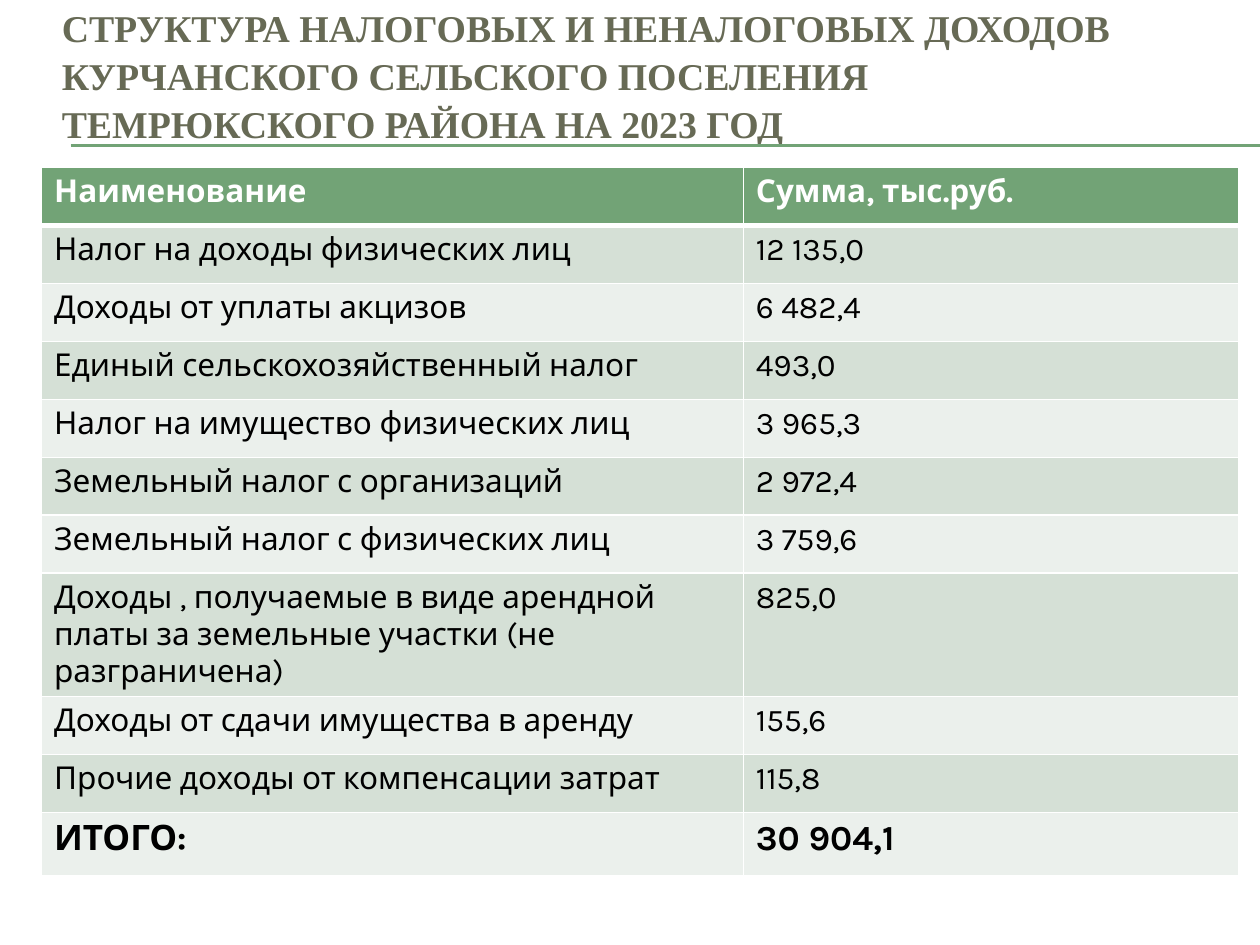
from lxml import etree
from pptx import Presentation
from pptx.dml.color import RGBColor
from pptx.enum.shapes import MSO_CONNECTOR
from pptx.enum.text import MSO_ANCHOR, PP_ALIGN
from pptx.oxml.ns import qn
from pptx.util import Inches, Pt

STRAIGHT = MSO_CONNECTOR.STRAIGHT
MIDDLE = MSO_ANCHOR.MIDDLE
LEFT = PP_ALIGN.LEFT

TITLE = ("СТРУКТУРА НАЛОГОВЫХ И НЕНАЛОГОВЫХ ДОХОДОВ "
         "КУРЧАНСКОГО СЕЛЬСКОГО ПОСЕЛЕНИЯ ТЕМРЮКСКОГО РАЙОНА НА 2023 ГОД")
HEADER = ("Наименование", "Сумма, тыс.руб.")
INCOME = [
    ("Налог на доходы физических лиц", "12 135,0"),
    ("Доходы от уплаты акцизов", "6 482,4"),
    ("Единый сельскохозяйственный налог", "493,0"),
    ("Налог на имущество физических лиц", "3 965,3"),
    ("Земельный налог с организаций", "2 972,4"),
    ("Земельный налог с физических лиц", "3 759,6"),
    ("Доходы , получаемые в виде арендной платы за земельные участки "
     "(не разграничена)", "825,0"),
    ("Доходы от сдачи имущества в аренду", "155,6"),
    ("Прочие доходы от компенсации затрат", "115,8"),
]
TOTAL = ("ИТОГО:", "30 904,1")

COLORS = {"title": "676A55", "accent": "72A376", "odd": "D5E0D6",
          "even": "EBF0EC", "white": "FFFFFF", "black": "000000"}
TITLE_FONT = {"name": "Times New Roman", "size": Pt(21.6), "bold": True}
HEADER_FONT = {"name": "Karla", "size": Pt(18), "bold": True}
INCOME_FONT = {**HEADER_FONT, "bold": False}
TOTAL_FONT = {**HEADER_FONT, "size": Pt(20)}

TABLE_BOX = (0.33, 1.33, 9.5, 5.47)
COLUMN_WIDTHS = (5.57, 3.93)
ROW_HEIGHT, LONG_ROW_HEIGHT, TOTAL_HEIGHT = 0.46, 0.8, 0.5
LONG_TEXT = 50
RULE_LEFT, RULE_RIGHT, RULE_TOPS = 0.56, 10, (1.15, 1.16)


def color(name):
    return RGBColor.from_string(COLORS[name])


def format_font(font, formats, color_name):
    for attribute, value in formats.items():
        setattr(font, attribute, value)
    font.color.rgb = color(color_name)


def add_rule(slide, top):
    rule = slide.shapes.add_connector(
        STRAIGHT, Inches(RULE_LEFT), Inches(top), Inches(RULE_RIGHT), Inches(top))
    rule.line.color.rgb = color("accent")
    rule.line.width = Pt(0.75)
    etree.SubElement(rule._element.spPr, qn("a:effectLst"))


def add_title(slide):
    title = slide.shapes.title
    title.left, title.top = Inches(0.39), Inches(0.16)
    title.width, title.height = Inches(9), Inches(0.86)
    frame = title.text_frame
    frame.text = TITLE
    frame.word_wrap = True
    frame.vertical_anchor = MIDDLE
    paragraph = frame.paragraphs[0]
    paragraph.alignment = LEFT
    paragraph.line_spacing = 1.05
    format_font(paragraph.runs[0].font, TITLE_FONT, "title")


def set_borders(cell, bottom_width):
    """Put white borders before the fill, as the cell schema requires."""
    properties = cell._tc.get_or_add_tcPr()
    widths = {"a:lnL": 1, "a:lnR": 1, "a:lnT": 1, "a:lnB": bottom_width}
    for position, (tag, width) in enumerate(widths.items()):
        border = etree.Element(qn(tag), w=str(Pt(width)))
        fill = etree.SubElement(border, qn("a:solidFill"))
        etree.SubElement(fill, qn("a:srgbClr"), val=COLORS["white"])
        properties.insert(position, border)


def fill_row(table, index, texts, formats, text_color, fill, bottom_width=1):
    for column, text in enumerate(texts):
        cell = table.cell(index, column)
        cell.text = text
        cell.margin_left = cell.margin_right = Inches(0.1)
        cell.margin_top = cell.margin_bottom = Inches(0.05)
        cell.fill.solid()
        cell.fill.fore_color.rgb = color(fill)
        format_font(cell.text_frame.paragraphs[0].runs[0].font, formats, text_color)
        set_borders(cell, bottom_width)


def add_income_table(slide):
    body = [*INCOME, TOTAL]
    table = slide.shapes.add_table(
        len(body) + 1, len(HEADER), *map(Inches, TABLE_BOX)).table
    for column, width in zip(table.columns, COLUMN_WIDTHS):
        column.width = Inches(width)

    table.rows[0].height = Inches(ROW_HEIGHT)
    fill_row(table, 0, HEADER, HEADER_FONT, "white", "accent", bottom_width=3)
    for index, texts in enumerate(body, start=1):
        height, formats = ROW_HEIGHT, INCOME_FONT
        if texts is TOTAL:
            height, formats = TOTAL_HEIGHT, TOTAL_FONT
        elif len(texts[0]) > LONG_TEXT:
            height = LONG_ROW_HEIGHT
        table.rows[index].height = Inches(height)
        fill_row(table, index, texts, formats, "black", "odd" if index % 2 else "even")


def main():
    presentation = Presentation()
    presentation.slide_width, presentation.slide_height = Inches(10), Inches(7.5)
    slide = presentation.slides.add_slide(presentation.slide_layouts[5])
    for top in RULE_TOPS:
        add_rule(slide, top)
    add_title(slide)
    add_income_table(slide)
    presentation.save("out.pptx")


if __name__ == "__main__":
    main()
